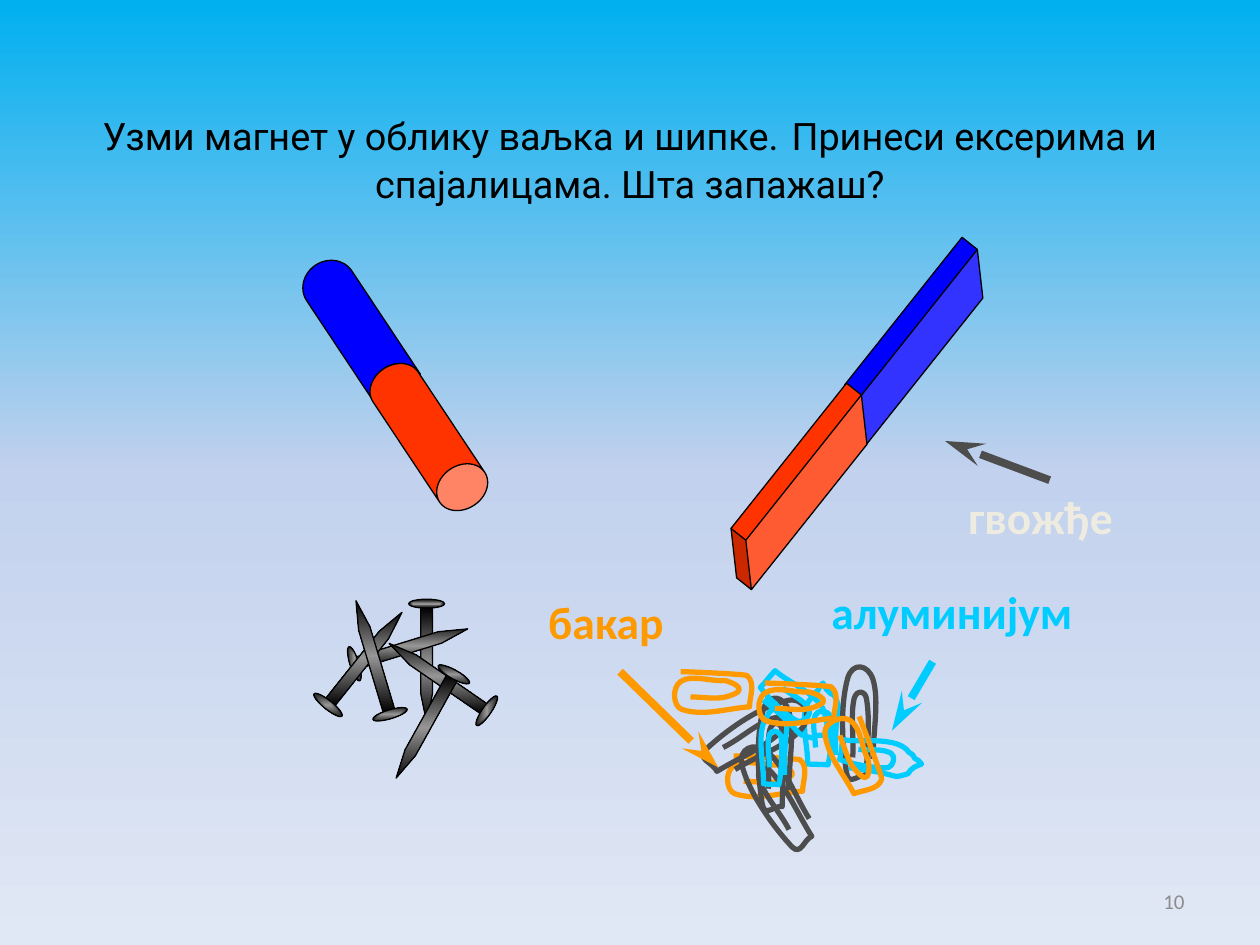
from math import cos, radians, sin

from lxml.etree import SubElement
from pptx import Presentation
from pptx.dml.color import RGBColor
from pptx.enum.shapes import MSO_CONNECTOR as Connector, MSO_SHAPE as Shape
from pptx.enum.text import MSO_ANCHOR as Anchor, PP_ALIGN as Align
from pptx.oxml.ns import qn
from pptx.util import Cm, Pt

COLORS = {
    "sky": "00B0F0", "haze": "C2D1ED", "mist": "E1E8F5",
    "black": "000000", "steel": "969696", "grey": "8C8C8C", "cream": "EEECE1",
    "north": "0000FF", "south": "FF3300",
    "copper": "FF9900", "aluminium": "00CCFF", "iron": "4D4D4D",
}

# Clip outlines in cm: box size, start point, then Bezier curves
CLIPS = {
    "copper": ((1.68, 0.89), (0.38, 0.51), [
        (0.66, 0.51, 0.94, 0.58, 1.19, 0.48), (1.63, 0.33, 1.09, 0.18, 1.07, 0.18),
        (0.76, 0.2, 0.41, 0.05, 0.18, 0.2), (0, 0.33, 0.03, 0.69, 0.2, 0.76),
        (0.64, 0.91, 1.12, 0.74, 1.57, 0.71), (1.57, 0.51, 1.7, 0.23, 1.52, 0.08),
        (1.5, 0.05, 0.28, 0, 0.18, 0)]),
    "iron": ((0.79, 2.51), (0.25, 1.93), [
        (0.28, 1.52, 0.2, 1.09, 0.28, 0.74), (0.33, 0.56, 0.51, 0.58, 0.53, 0.76),
        (0.61, 1.24, 0.53, 1.78, 0.53, 2.29), (0.38, 2.26, 0.18, 2.51, 0.13, 2.26),
        (0.03, 1.65, 0, 0.86, 0.15, 0.33), (0.25, 0, 0.56, 0.05, 0.66, 0.36),
        (0.79, 0.79, 0.66, 1.42, 0.66, 1.96)]),
    "aluminium": ((0.91, 1.65), (0.36, 1.3), [
        (0.36, 1.07, 0.28, 0.84, 0.36, 0.64), (0.41, 0.53, 0.61, 0.56, 0.66, 0.66),
        (0.71, 0.81, 0.69, 1.37, 0.61, 1.65), (0.48, 1.63, 0.36, 1.65, 0.2, 1.63),
        (0.2, 1.63, 0.2, 1.57, 0.2, 1.55), (0.2, 1.22, 0, 0.53, 0.3, 0.28),
        (0.33, 0.2, 0.36, 0.18, 0.41, 0.15), (0.43, 0.08, 0.46, 0.05, 0.51, 0),
        (0.56, 0.1, 0.61, 0.2, 0.74, 0.25), (0.91, 0.64, 0.76, 0.28, 0.76, 1.45)]),
}


def rgb(name):
    return RGBColor.from_string(COLORS[name])


def write(paragraph, text, *, size, color, font="Calibri", bold=False, align=Align.LEFT):
    paragraph.alignment = align
    run = paragraph.add_run()
    run.text = text
    run.font.name, run.font.size, run.font.bold = font, Pt(size), bold
    run.font.color.rgb = rgb(color)


def set_gradient(fill, element, names, radial=False):
    fill.gradient()
    gradient = element.find(".//" + qn("a:gradFill"))
    for child in list(gradient):
        gradient.remove(child)
    stops = SubElement(gradient, qn("a:gsLst"))
    for i, name in enumerate(names):
        stop = SubElement(stops, qn("a:gs"), pos=str(100000 * i // (len(names) - 1)))
        SubElement(stop, qn("a:srgbClr"), val=COLORS[name])
    if radial:
        shade = SubElement(gradient, qn("a:path"), path="shape")
        SubElement(shade, qn("a:fillToRect"), l="50000", t="50000", r="50000", b="50000")
    else:
        SubElement(gradient, qn("a:lin"), ang="5400000", scaled="1")


class Board:
    def __init__(self, slide):
        self.shapes = slide.shapes
        set_gradient(slide.background.fill, slide._element, ["sky", "haze", "mist"])

    def title(self, parts, left, top, width, height):
        title = self.shapes.title
        title.left, title.top, title.width, title.height = map(Cm, (left, top, width, height))
        frame = title.text_frame
        frame.word_wrap, frame.vertical_anchor = True, Anchor.TOP
        frame.margin_top, frame.margin_bottom = Cm(1.26), 0
        for text, size in parts:
            write(frame.paragraphs[0], text, size=size, color="black", font="Roboto",
                  align=Align.CENTER)

    def label(self, text, left, top, width, height, anchor=Anchor.TOP, **style):
        frame = self.shapes.add_textbox(*map(Cm, (left, top, width, height))).text_frame
        frame.word_wrap, frame.vertical_anchor = True, anchor
        write(frame.paragraphs[0], text, **style)

    def group(self):
        return self.shapes.add_group_shape()

    def solid(self, group, kind, left, top, width, height, colors, angle=0, adjust=None,
              radial=False):
        body = group.shapes.add_shape(kind, *map(Cm, (left, top, width, height)))
        body.rotation = angle
        body.shadow.inherit = False
        if adjust is not None:
            body.adjustments[0] = adjust
        if len(colors) > 1:
            set_gradient(body.fill, body._element, colors, radial)
        else:
            body.fill.solid()
            body.fill.fore_color.rgb = rgb(colors[0])
        body.line.color.rgb, body.line.width = rgb("black"), Pt(0.75)

    def nail(self, x, y, angle):
        """Shaft centred on x, y with its head at the blunt end."""
        shift = 0.08  # from the centre of the whole nail to that of the shaft
        x -= shift * cos(radians(angle))
        y -= shift * sin(radians(angle))
        nail = self.group()
        self.solid(nail, Shape.PENTAGON, x + shift - 1.16, y - 0.12, 2.32, 0.24,
                   ["black", "steel", "black"], adjust=2.43)
        self.solid(nail, Shape.OVAL, x + shift - 1.32, y - 0.36, 0.18, 0.72,
                   ["steel", "black"], radial=True)
        nail.rotation = angle

    def clip(self, metal, left, top, angle=0, size=None):
        base, start, curves = CLIPS[metal]
        builder = self.shapes.build_freeform(Cm(start[0]), Cm(start[1]))
        builder.add_line_segments([(Cm(c[4]), Cm(c[5])) for c in curves], close=False)
        wire = builder.convert_to_shape()
        wire.left, wire.top = Cm(left), Cm(top)
        wire.width, wire.height = map(Cm, size or base)
        wire.rotation = angle
        wire.shadow.inherit = False
        wire.fill.background()
        wire.line.color.rgb, wire.line.width = rgb(metal), Pt(3)
        # Bend the straight segments, in coordinates of the whole box
        outline = wire._element.find(".//" + qn("a:path"))
        for child in list(outline):
            outline.remove(child)
        outline.set("w", str(Cm(base[0])))
        outline.set("h", str(Cm(base[1])))
        for tag, numbers in [("a:moveTo", start)] + [("a:cubicBezTo", c) for c in curves]:
            step = SubElement(outline, qn(tag))
            for x, y in zip(numbers[::2], numbers[1::2]):
                SubElement(step, qn("a:pt"), x=str(Cm(x)), y=str(Cm(y)))

    def arrow(self, metal, *ends):
        pointer = self.shapes.add_connector(Connector.STRAIGHT, *map(Cm, ends))
        pointer.line.color.rgb, pointer.line.width = rgb(metal), Pt(4.5)
        SubElement(pointer.line._get_or_add_ln(), qn("a:tailEnd"),
                   type="stealth", w="med", len="lg")
        SubElement(pointer._element.spPr, qn("a:effectLst"))


def main():
    deck = Presentation()
    deck.slide_width, deck.slide_height = Cm(25.4), Cm(19.05)
    board = Board(deck.slides.add_slide(deck.slide_layouts[5]))

    # Page number and task
    board.label("10", 18.21, 17.65, 5.92, 1.02, anchor=Anchor.MIDDLE,
                size=12, color="grey", align=Align.RIGHT)
    board.title([("Узми магнет у облику ваљка и шипке.", 21.6), (" ", 28.8),
                 ("Принеси ексерима и спајалицама. Шта запажаш?", 21.6)],
                1.27, 0.76, 22.86, 3.18)

    # Cylinder magnet
    cylinder = board.group()
    board.solid(cylinder, Shape.FLOWCHART_STORED_DATA, 5.69, 6.05, 3, 1.09, ["north"], 56.4)
    board.solid(cylinder, Shape.CAN, 8.1, 7.16, 1.09, 3.3, ["south"], 146.4, adjust=0.8)

    # Nails
    for nail in [(8.6, 13.4, 90), (8.32, 13.02, 342.9), (8.8, 13.63, 214.6),
                 (8.55, 14.67, 119.1), (7.38, 13.25, 308.6), (7.51, 13.22, 253.3)]:
        board.nail(*nail)

    # Bar magnet
    bar = board.group()
    board.solid(bar, Shape.CUBE, 16.17, 6.34, 4.5, 1.09, ["north"], 128.5, adjust=0.64)
    board.solid(bar, Shape.CUBE, 13.88, 9.26, 4.45, 1.09, ["south"], 128.5, adjust=0.65)

    # Paper clips, back to front
    for clip in [("aluminium", 16.08, 13.77), ("copper", 14.61, 15.24),
                 ("iron", 15.24, 13.97), ("iron", 16.94, 13.34),
                 ("iron", 15.24, 14.81, 327.8, (0.89, 2.51)),
                 ("iron", 14.76, 13.61, 58.2, (0.97, 2.51)),
                 ("aluminium", 15.6, 13.41, 129, (0.99, 1.7)),
                 ("aluminium", 15.24, 14.17, 0, (0.69, 1.65)),
                 ("aluminium", 17.32, 14.43, 96.7, (0.89, 1.65)),
                 ("copper", 13.54, 13.54), ("copper", 15.24, 13.77),
                 ("copper", 16.33, 14.78, 66.8)]:
        board.clip(*clip)

    # Metal names and arrows
    for text, color, left, top, width in [("алуминијум", "aluminium", 16.51, 11.64, 7.37),
                                          ("бакар", "copper", 10.8, 11.86, 3.99),
                                          ("гвожђе", "cream", 19.27, 9.74, 4.2)]:
        board.label(text, left, top, width, 1.88, size=26, color=color, bold=True)
    board.arrow("copper", 12.5, 13.54, 14.48, 15.47)
    board.arrow("aluminium", 18.8, 13.34, 17.98, 14.73)
    board.arrow("iron", 21.16, 9.68, 19.05, 8.89)

    deck.save("out.pptx")


if __name__ == "__main__":
    main()
